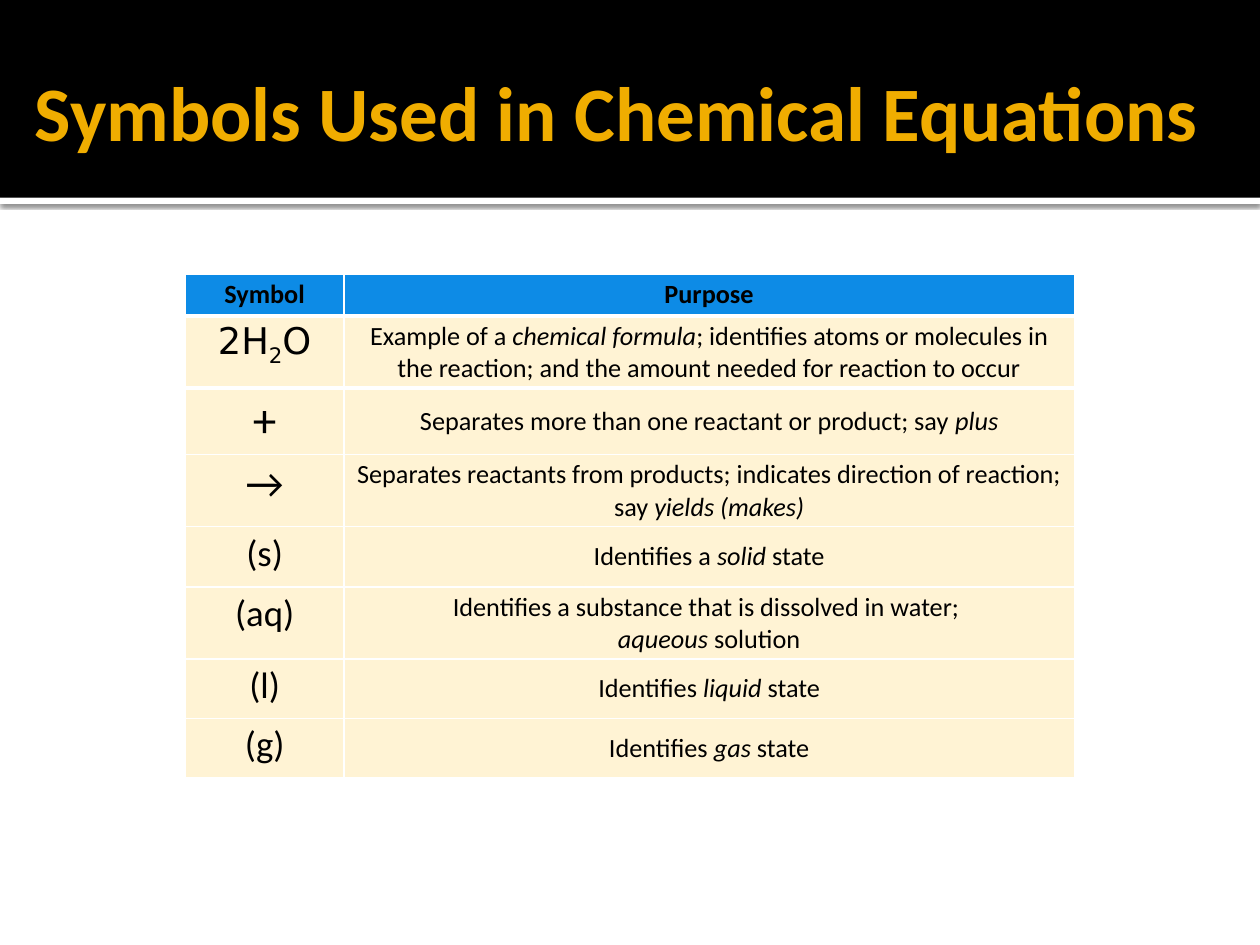
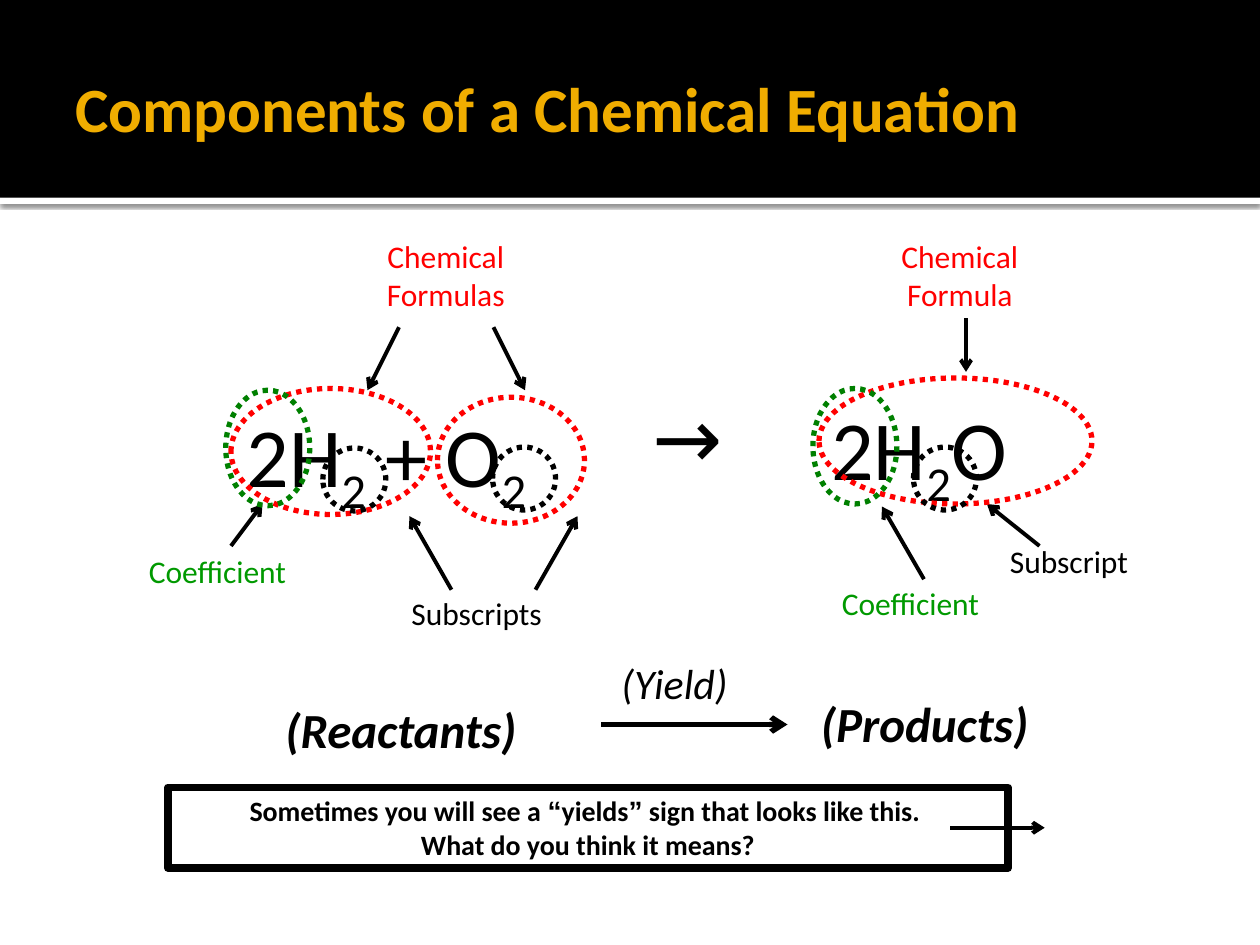
"""Build two slides on the symbols and components of chemical equations."""
from typing import NamedTuple

from lxml.etree import SubElement
from pptx import Presentation
from pptx.dml.color import RGBColor
from pptx.enum.dml import MSO_LINE
from pptx.enum.shapes import MSO_CONNECTOR, MSO_SHAPE
from pptx.enum.text import MSO_ANCHOR, PP_ALIGN
from pptx.oxml.ns import qn
from pptx.util import Pt

COLORS = {
    "black": "000000", "white": "FFFFFF", "gold": "F0AD00", "blue": "0D8BE6",
    "cream": "FFF0C9", "red": "FF0000", "ring_green": "008000", "text_green": "009900",
}
FONT = "Calibri"
QUOTE_FONT = "Arial"
BAND_HEIGHT = 113


class TextStyle(NamedTuple):
    size: float
    color: str = "black"
    bold: bool = False
    italic: bool = False
    font: str = FONT
    align: PP_ALIGN = PP_ALIGN.LEFT


class Label(NamedTuple):
    text: str
    left: float
    top: float
    width: float
    height: float
    style: TextStyle
    wrap: bool = False


class Arrow(NamedTuple):
    start_x: float
    start_y: float
    end_x: float
    end_y: float
    weight: float = 2.25


class Ring(NamedTuple):
    color: str
    left: float
    top: float
    width: float
    height: float


class SymbolRow(NamedTuple):
    symbol: str
    purpose: str
    height: float
    symbol_size: float = 21
    symbol_font: str = FONT


EQUATION = TextStyle(48)
PART = TextStyle(28, bold=True, italic=True)
FORMULA = TextStyle(18, "red", align=PP_ALIGN.CENTER)
COEFFICIENT = TextStyle(18, "text_green")
SUBSCRIPT = TextStyle(18)
NOTE = TextStyle(16, bold=True, align=PP_ALIGN.CENTER)
HEADING = TextStyle(15, bold=True, align=PP_ALIGN.CENTER)
PURPOSE = TextStyle(15, align=PP_ALIGN.CENTER)

SYMBOL_ROWS = [
    SymbolRow("2H_2_O", "Example of a *chemical formula*; identifies atoms or molecules in "
              "the reaction; and the amount needed for reaction to occur", 41, 21, "DejaVu Sans"),
    SymbolRow("+", "Separates more than one reactant or product; say *plus*", 38, 27),
    SymbolRow("→", "Separates reactants from products; indicates direction of reaction; "
              "say *yields (makes)*", 41, 24),
    SymbolRow("(s)", "Identifies a *solid *state", 34.5),
    SymbolRow("(aq)", "Identifies a substance that is dissolved in water; \n*aqueous* solution", 41),
    SymbolRow("(l)", "Identifies* liquid *state", 34),
    SymbolRow("(g)", "Identifies *gas* state", 34),
]
COLUMN_WIDTHS = (90.5, 417.5)
HEADER_HEIGHT = 24

LABELS = [
    Label(" 2H_2_ + O_2_", 123, 227, 258, 65, EQUATION, True),
    Label("2H_2_O", 468, 223, 162, 65, EQUATION, True),
    Label("→", 366, 216, 60, 65, TextStyle(48, font="Cabin"), True),
    Label("(Reactants)", 156, 396, 174, 41, PART, True),
    Label("(Products)", 462, 392.5, 142, 41, PART),
    Label("(Yield)", 348, 372, 82, 36, TextStyle(24, italic=True)),
    Label("Chemical \nFormulas", 213, 132, 83.5, 51, FORMULA),
    Label("Chemical \nFormula", 507, 132, 83, 51, FORMULA),
    Label("Coefficient", 78, 312, 94, 29, COEFFICIENT),
    Label("Coefficient", 474, 330, 94, 29, COEFFICIENT),
    Label("Subscripts", 228, 336, 90, 29, SUBSCRIPT),
    Label("Subscript", 570, 306, 83.5, 29, SUBSCRIPT),
]
ARROWS = [
    Arrow(343.5, 414, 450, 414, 3),
    Arrow(282, 187, 300, 223),
    Arrow(228, 187, 210, 223),
    Arrow(552, 182, 552, 212.5),
    Arrow(258, 337, 234, 295),
    Arrow(306, 337, 330, 295),
    Arrow(528, 331, 504, 289.5),
    Arrow(543, 473, 597, 473),
    Arrow(132, 312, 150, 288),
    Arrow(594, 312, 564, 288),
]
RINGS = [
    Ring("red", 132, 222, 114, 72),
    Ring("red", 250, 227, 84, 72),
    Ring("red", 468, 216, 156, 72),
    Ring("ring_green", 464.5, 222, 48, 66),
    Ring("ring_green", 129, 223, 48, 66),
    Ring("black", 184.5, 256, 36, 36),
    Ring("black", 281.5, 255.5, 36, 36),
    Ring("black", 522, 255.5, 36, 36),
]


def rgb(name: str) -> RGBColor:
    return RGBColor.from_string(COLORS[name])


def add_span(para, text: str, style: TextStyle, italic: bool, subscript: bool) -> None:
    span = para.add_run()
    span.text = text
    span.font.name = QUOTE_FONT if text in ("“", "”") else style.font
    span.font.size = Pt(style.size)
    span.font.bold = style.bold
    span.font.italic = italic
    span.font.color.rgb = rgb(style.color)
    if subscript:
        span.font._element.set("baseline", "-25000")


def write_text(frame, text: str, style: TextStyle) -> None:
    """Write lines in which * toggles italics and _ toggles subscript."""
    for number, line in enumerate(text.split("\n")):
        para = frame.add_paragraph() if number else frame.paragraphs[0]
        para.alignment = style.align
        for slant, part in enumerate(line.split("*")):
            for depth, piece in enumerate(part.split("_")):
                for chunk in piece.replace("“", "|“|").replace("”", "|”|").split("|"):
                    if chunk:
                        add_span(para, chunk, style, style.italic or slant % 2 == 1, depth % 2 == 1)


def add_label(slide, label: Label):
    box = slide.shapes.add_textbox(Pt(label.left), Pt(label.top), Pt(label.width), Pt(label.height))
    box.text_frame.word_wrap = label.wrap
    write_text(box.text_frame, label.text, label.style)
    return box


def add_rectangle(slide, left: float, top: float, width: float, height: float, color: str):
    box = slide.shapes.add_shape(MSO_SHAPE.RECTANGLE, Pt(left), Pt(top), Pt(width), Pt(height))
    box.shadow.inherit = False
    box.fill.solid()
    box.fill.fore_color.rgb = rgb(color)
    box.line.fill.background()
    return box


def add_titled_slide(deck, title: Label):
    slide = deck.slides.add_slide(deck.slide_layouts[6])
    strip = add_rectangle(slide, 0, BAND_HEIGHT, 720, 3.6, "white")
    effects = strip._element.spPr.find(qn("a:effectLst"))
    shadow = SubElement(effects, qn("a:outerShdw"), blurRad=str(Pt(2.5)), dist=str(Pt(0.8)),
                        dir="5400000", algn="tl", rotWithShape="0")
    shade = SubElement(shadow, qn("a:srgbClr"), val=COLORS["black"])
    SubElement(shade, qn("a:alpha"), val="60000")
    add_rectangle(slide, 0, 0, 720, BAND_HEIGHT, "black")
    frame = add_label(slide, title).text_frame
    frame.vertical_anchor = MSO_ANCHOR.MIDDLE
    frame.margin_right = Pt(3.6)
    return slide


def add_arrow(slide, arrow: Arrow) -> None:
    line = slide.shapes.add_connector(MSO_CONNECTOR.STRAIGHT, Pt(arrow.start_x), Pt(arrow.start_y),
                                      Pt(arrow.end_x), Pt(arrow.end_y))
    line.line.color.rgb = rgb("black")
    line.line.width = Pt(arrow.weight)
    SubElement(line.line._get_or_add_ln(), qn("a:tailEnd"), type="arrow")
    SubElement(line._element.spPr, qn("a:effectLst"))


def add_ring(slide, ring: Ring) -> None:
    oval = slide.shapes.add_shape(MSO_SHAPE.OVAL, Pt(ring.left), Pt(ring.top),
                                  Pt(ring.width), Pt(ring.height))
    oval.shadow.inherit = False
    oval.fill.background()
    oval.line.color.rgb = rgb(ring.color)
    oval.line.width = Pt(3)
    oval.line.dash_style = MSO_LINE.ROUND_DOT


def fill_cell(cell, text: str, style: TextStyle, color: str, top: float, bottom: float) -> None:
    cell.margin_left = cell.margin_right = Pt(5.2)
    cell.margin_top = cell.margin_bottom = Pt(2.6)
    write_text(cell.text_frame, text, style)
    properties = cell._tc.get_or_add_tcPr()
    for side, weight in (("L", 1), ("R", 1), ("T", top), ("B", bottom)):
        border = SubElement(properties, qn(f"a:ln{side}"), w=str(Pt(weight)))
        paint = SubElement(border, qn("a:solidFill"))
        SubElement(paint, qn("a:srgbClr"), val=COLORS["white"])
    cell.fill.solid()
    cell.fill.fore_color.rgb = rgb(color)
    if color == "cream":
        tint = properties.find(qn("a:solidFill")).find(qn("a:srgbClr"))
        SubElement(tint, qn("a:alpha"), val="78000")


def add_symbol_table(slide) -> None:
    heights = [HEADER_HEIGHT] + [row.height for row in SYMBOL_ROWS]
    table = slide.shapes.add_table(len(heights), len(COLUMN_WIDTHS), Pt(106), Pt(156.5),
                                   Pt(sum(COLUMN_WIDTHS)), Pt(sum(heights))).table
    for column, width in zip(table.columns, COLUMN_WIDTHS):
        column.width = Pt(width)
    for row, height in zip(table.rows, heights):
        row.height = Pt(height)
    for column, heading in enumerate(("Symbol", "Purpose")):
        fill_cell(table.cell(0, column), heading, HEADING, "blue", 1, 3)
    for number, row in enumerate(SYMBOL_ROWS, 1):
        top, bottom = 3 if number <= 2 else 1, 3 if number == 1 else 1
        symbol = TextStyle(row.symbol_size, font=row.symbol_font, align=PP_ALIGN.CENTER)
        fill_cell(table.cell(number, 0), row.symbol, symbol, "cream", top, bottom)
        fill_cell(table.cell(number, 1), row.purpose, PURPOSE, "cream", top, bottom)
        table.cell(number, 1).vertical_anchor = MSO_ANCHOR.MIDDLE


def add_yields_note(slide) -> None:
    box = add_rectangle(slide, 96, 450, 480, 46, "white")
    box.line.color.rgb = rgb("black")
    box.line.width = Pt(4.5)
    box.text_frame.word_wrap = True
    box.text_frame.vertical_anchor = MSO_ANCHOR.TOP
    write_text(box.text_frame, "Sometimes you will see a “yields” sign that looks like this. \n"
               "What do you think it means?", NOTE)


def main() -> None:
    deck = Presentation()
    deck.slide_width, deck.slide_height = Pt(720), Pt(540)

    symbols = add_titled_slide(deck, Label(
        "Symbols Used in Chemical Equations", 6.5, 29.5, 689, 67.5,
        TextStyle(44, "gold", bold=True, align=PP_ALIGN.CENTER), True))
    add_symbol_table(symbols)

    components = add_titled_slide(deck, Label(
        "Components of a Chemical Equation", 36, 12, 648, 99,
        TextStyle(36, "gold", bold=True), True))
    for label in LABELS:
        add_label(components, label)
    add_yields_note(components)
    for arrow in ARROWS:
        add_arrow(components, arrow)
    for ring in RINGS:
        add_ring(components, ring)

    deck.save("out.pptx")


if __name__ == "__main__":
    main()
